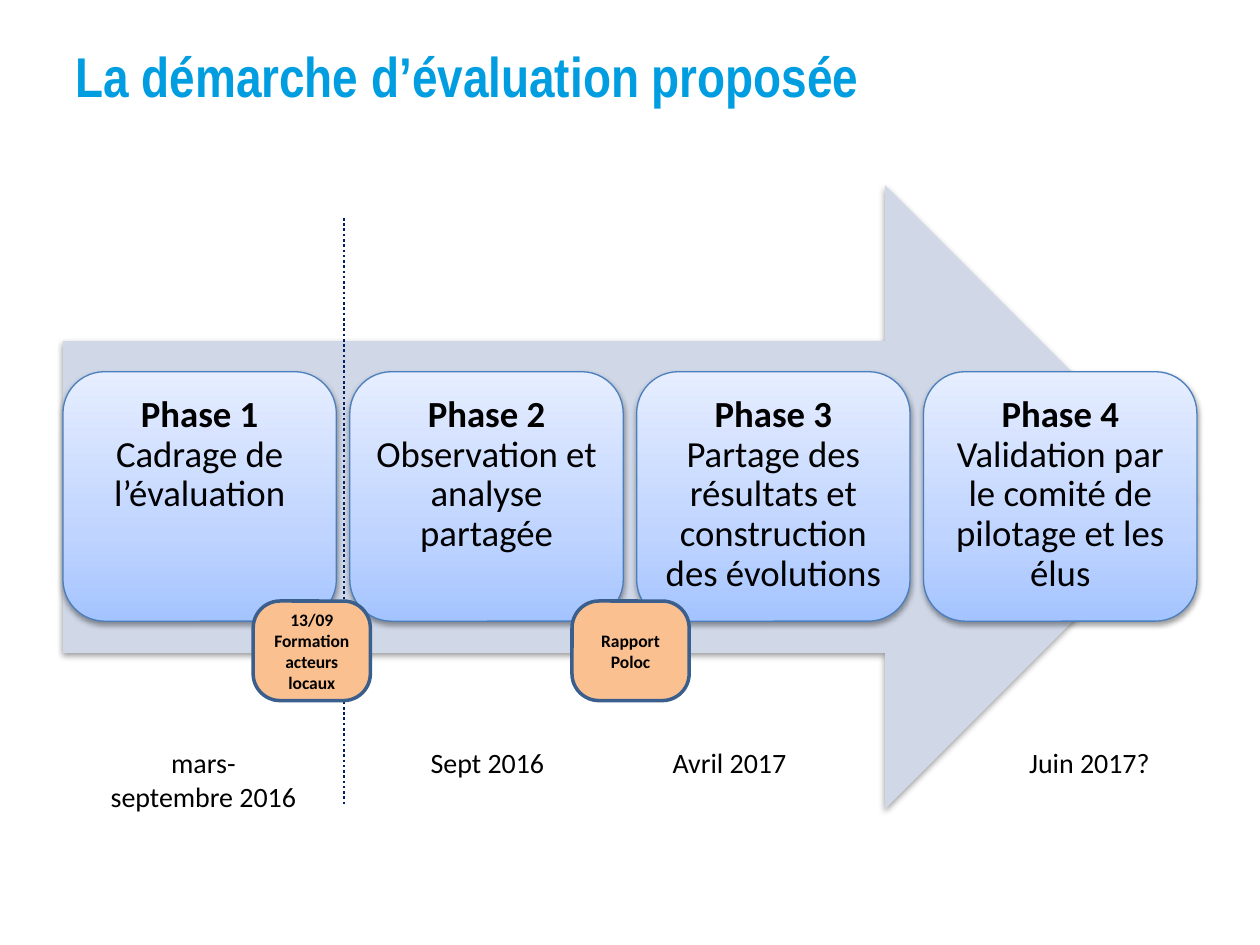
"""Build the slide of the four phases of an evaluation."""
import copy

import lxml.etree
import pptx
import pptx.dml.color
import pptx.enum.dml
import pptx.enum.shapes
import pptx.enum.text
import pptx.oxml
import pptx.oxml.ns
import pptx.util

Inches = pptx.util.Inches
Pt = pptx.util.Pt
RGBColor = pptx.dml.color.RGBColor
Shape = pptx.enum.shapes.MSO_SHAPE
Align = pptx.enum.text.PP_ALIGN
Anchor = pptx.enum.text.MSO_ANCHOR
qn = pptx.oxml.ns.qn

BLACK = RGBColor(0x00, 0x00, 0x00)
CYAN = RGBColor(0x00, 0x9E, 0xE0)
NAVY = RGBColor(0x00, 0x20, 0x60)
PALE = RGBColor(0xD0, 0xD8, 0xE8)
EDGE = RGBColor(0x4B, 0x7E, 0xBC)
PEACH = RGBColor(0xFA, 0xC0, 0x90)
STEEL = RGBColor(0x3A, 0x5F, 0x8C)
STOPS = [
    (0, RGBColor(0xA4, 0xC4, 0xFF)),
    (0.35, RGBColor(0xBF, 0xD4, 0xFF)),
    (1, RGBColor(0xE6, 0xEE, 0xFF)),
]

LEFT = 0.5
STEP = (7.33 - LEFT) / 3
PHASES = [
    ("Phase 1 ", "Cadrage de l’évaluation"),
    ("Phase 2 ", "Observation et analyse partagée"),
    ("Phase 3", " Partage des résultats et construction des évolutions"),
    ("Phase 4", " Validation par le comité de pilotage et les élus"),
]
DATES = [
    (0.75, 0.64, "mars- septembre 2016", Align.CENTER),
    (3.32, 0.37, "Sept 2016", Align.LEFT),
    (5.24, 0.37, "Avril 2017", Align.LEFT),
    (8.07, 0.37, "Juin 2017?", Align.LEFT),
]
BADGES = [
    (2.01, ["13/09", "Formation acteurs locaux"]),
    (4.54, ["Rapport Poloc"]),
]


def write(shape, paras, size=16, font="Calibri", color=BLACK,
          align=Align.LEFT, anchor=Anchor.TOP, space=None):
    """Fill a shape with paragraphs, each a list of (text, bold) runs."""
    frame = shape.text_frame
    frame.word_wrap = True
    frame.vertical_anchor = anchor
    for i, runs in enumerate(paras):
        para = frame.add_paragraph() if i else frame.paragraphs[0]
        para.alignment = align
        para.line_spacing = space
        for text, bold in runs:
            run = para.add_run()
            run.text = text
            run.font.size = Pt(size)
            run.font.name = font
            run.font.bold = bold
            run.font.color.rgb = color


def add_box(slide, x, y, w, h):
    """Add a text box."""
    return slide.shapes.add_textbox(Inches(x), Inches(y), Inches(w), Inches(h))


def add_form(slide, kind, x, y, w, h, fill=None, edge=None, width=1):
    """Add a preset shape with a plain fill and an outline, if any."""
    form = slide.shapes.add_shape(
        kind, Inches(x), Inches(y), Inches(w), Inches(h))
    form.shadow.inherit = False
    if fill is not None:
        form.fill.solid()
        form.fill.fore_color.rgb = fill
    if edge is None:
        form.line.fill.background()
    else:
        form.line.color.rgb = edge
        form.line.width = Pt(width)
    return form


def cast_shade(form):
    """Give a shape a soft shadow below it."""
    form._element.spPr.find(qn("a:effectLst")).append(pptx.oxml.parse_xml(
        f'<a:outerShdw {pptx.oxml.ns.nsdecls("a")} blurRad="40000" '
        'dist="20000" dir="5400000" rotWithShape="0"><a:srgbClr val="000000">'
        '<a:alpha val="38000"/></a:srgbClr></a:outerShdw>'))


def blend(form):
    """Fill a shape with the upward blue gradient."""
    form.fill.gradient()
    form.fill.gradient_angle = 90
    stops = form._element.spPr.find(".//" + qn("a:gsLst"))
    stops.insert(1, copy.deepcopy(stops[0]))
    for stop, (place, color) in zip(form.fill.gradient_stops, STOPS):
        stop.position = place
        stop.color.rgb = color


def add_phase(slide, x, name, text):
    """Add a phase card with its text."""
    card = add_form(slide, Shape.ROUNDED_RECTANGLE, x, 2.95, 2.17, 1.98,
                    edge=EDGE, width=0.75)
    blend(card)
    cast_shade(card)
    label = add_box(slide, x + 0.1, 3.05, 1.97, 1.79)
    frame = label.text_frame
    frame.margin_left = frame.margin_right = Inches(0.09)
    frame.margin_top = frame.margin_bottom = Inches(0.09)
    write(label, [[(name, True), (text, False)]], size=21,
          align=Align.CENTER, space=0.9)


def add_badge(slide, x, lines):
    """Add a milestone badge."""
    badge = add_form(slide, Shape.ROUNDED_RECTANGLE, x, 4.77, 0.93, 0.79,
                     fill=PEACH, edge=STEEL, width=2)
    badge.adjustments[0] = 0.27
    write(badge, [[(line, True)] for line in lines], size=10,
          align=Align.CENTER, anchor=Anchor.MIDDLE)


def add_rule(slide, x, top, end):
    """Add a dotted upright line."""
    rule = slide.shapes.add_connector(
        pptx.enum.shapes.MSO_CONNECTOR.STRAIGHT,
        Inches(x), Inches(top), Inches(x), Inches(end))
    rule.line.color.rgb = NAVY
    rule.line.width = Pt(1.5)
    rule.line.dash_style = pptx.enum.dml.MSO_LINE.ROUND_DOT
    lxml.etree.SubElement(rule._element.spPr, qn("a:effectLst"))


def main():
    """Build and save the slide."""
    deck = pptx.Presentation()
    deck.slide_width, deck.slide_height = Inches(10), Inches(7.5)
    slide = deck.slides.add_slide(deck.slide_layouts[6])

    write(add_box(slide, LEFT, -0.03, 9, 1.25),
          [[("La démarche d’évaluation proposée", True)]], size=32,
          font="Arial Narrow", color=CYAN, anchor=Anchor.MIDDLE)
    cast_shade(add_form(slide, Shape.RIGHT_ARROW, LEFT, 1.47, 9, 4.95,
                        fill=PALE))
    for i, (name, text) in enumerate(PHASES):
        add_phase(slide, LEFT + i * STEP, name, text)
    add_rule(slide, 2.73, 1.73, 6.38)
    for x, high, text, align in DATES:
        write(add_box(slide, x, 5.87, 1.73, high), [[(text, False)]],
              align=align)
    for x, lines in BADGES:
        add_badge(slide, x, lines)

    deck.save("out.pptx")


if __name__ == "__main__":
    main()
